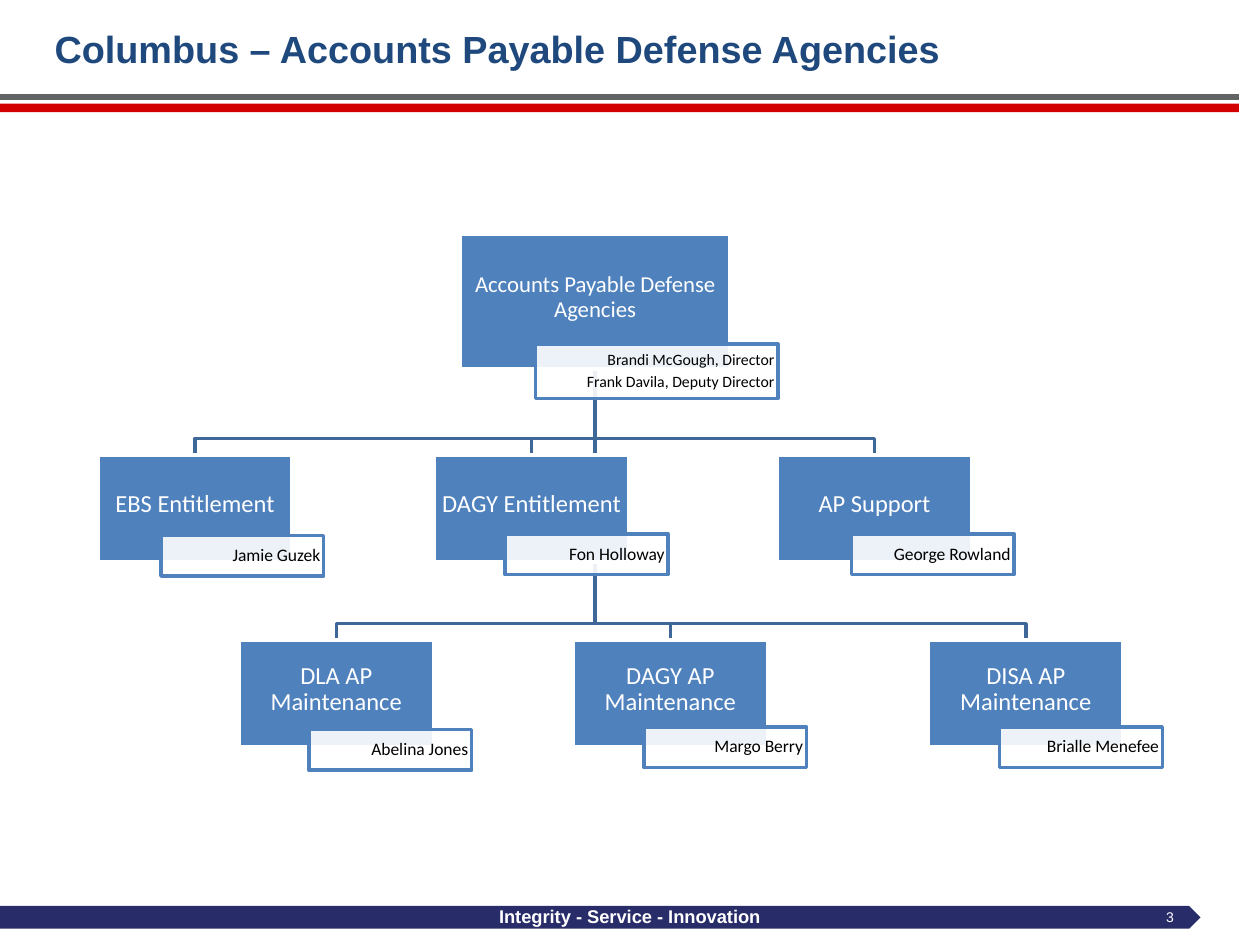
from pptx import Presentation
from pptx.dml.color import RGBColor
from pptx.enum.shapes import MSO_CONNECTOR, MSO_SHAPE
from pptx.enum.text import MSO_ANCHOR, MSO_AUTO_SIZE, PP_ALIGN
from pptx.oxml.ns import qn
from pptx.util import Pt
from lxml.etree import SubElement

TITLE = "Columbus – Accounts Payable Defense Agencies"
MOTTO = "Integrity - Service - Innovation"
NUMBER = "3"
HEAD = ("Accounts Payable Defense Agencies",
        ["Brandi McGough, Director", "Frank Davila, Deputy Director"])
ROWS = [
    (260, [("EBS Entitlement", "Jamie Guzek", 56, 92, 306),
           ("DAGY Entitlement", "Fon Holloway", 248.3, 288.7, 305.2),
           ("AP Support", "George Rowland", 444.3, 486.5, 305.2)]),
    (365.8, [("DLA AP Maintenance", "Abelina Jones", 136.7, 176.5, 417),
             ("DAGY AP Maintenance", "Margo Berry", 327.6, 367.9, 415.4),
             ("DISA AP Maintenance", "Brialle Menefee", 530.7, 571.2, 415.4)]),
]
BOX_W, BOX_H = 111, 61.2
TAG_W, TAG_H = 93, 23.2
STEM, FOOT, DROP = 340, 211, 9.4
BLUE, DARK, WHITE, BLACK = "4F81BD", "3F6797", "FFFFFF", "000000"


def color(code):
    """Turn a hex string into a colour."""
    return RGBColor.from_string(code)


def write(shape, lines, size, tint, align, pad, font="Calibri", bold=False, pitch=None):
    """Put styled lines of text into a shape."""
    frame = shape.text_frame
    frame.word_wrap = True
    frame.auto_size = MSO_AUTO_SIZE.NONE
    frame.vertical_anchor = MSO_ANCHOR.MIDDLE
    (frame.margin_left, frame.margin_top,
     frame.margin_right, frame.margin_bottom) = map(Pt, pad)
    frame.text = "\n".join(lines)
    for i, para in enumerate(frame.paragraphs):
        para.alignment = align
        if pitch:
            para.line_spacing = pitch
        if i:
            para.space_before = Pt(3)
        para.font.name, para.font.size, para.font.bold = font, Pt(size), bold
        para.font.color.rgb = color(tint)


def block(slide, kind, place, fill, line=None):
    """Add a filled shape with an optional outline."""
    shape = slide.shapes.add_shape(kind, *map(Pt, place))
    shape.shadow.inherit = False
    shape.fill.solid()
    shape.fill.fore_color.rgb = color(fill)
    if line:
        shape.line.color.rgb, shape.line.width = color(line), Pt(2)
    else:
        shape.line.fill.background()
    return shape


def branch(slide, top, mid):
    """Draw an elbow from the head box to a unit."""
    bus = top - DROP
    pen = slide.shapes.build_freeform(Pt(STEM), Pt(FOOT))
    pen.add_line_segments([(Pt(STEM), Pt(bus)), (Pt(mid), Pt(bus)),
                           (Pt(mid), Pt(top))], close=False)
    shape = pen.convert_to_shape()
    shape.shadow.inherit = False
    shape.fill.background()
    shape.line.color.rgb, shape.line.width = color(DARK), Pt(2)


def unit(slide, name, people, box, tag, size, small):
    """Add a unit box with the name tag of its leaders."""
    shape = block(slide, MSO_SHAPE.RECTANGLE, box, BLUE, WHITE)
    write(shape, [name], size, WHITE, PP_ALIGN.CENTER, (1, 1, 1, 6), pitch=0.9)
    label = block(slide, MSO_SHAPE.RECTANGLE, tag, WHITE, BLUE)
    tone = label._element.spPr.find(qn("a:solidFill")).find(qn("a:srgbClr"))
    SubElement(tone, qn("a:alpha")).set("val", "90000")
    write(label, people, small, BLACK, PP_ALIGN.RIGHT, (2, 1, 2, 1), pitch=0.9)


def frame_page(slide):
    """Add the title, the rules and the footer."""
    block(slide, MSO_SHAPE.PENTAGON, (0, 517.7, 686, 13), "282C69")
    block(slide, MSO_SHAPE.RECTANGLE, (-0.5, 59.2, 708.5, 5), "D20000")
    rule = slide.shapes.add_connector(MSO_CONNECTOR.STRAIGHT, 0, Pt(55.5), Pt(708), Pt(55.5))
    rule.line.color.rgb, rule.line.width = color("626364"), Pt(3.25)
    SubElement(rule._element.spPr, qn("a:effectLst"))
    for text, place, size, align, bold in [
            (MOTTO, (246, 517.2, 228, 13), 10.5, PP_ALIGN.CENTER, True),
            (NUMBER, (516, 517.5, 162, 12.5), 8, PP_ALIGN.RIGHT, False)]:
        box = slide.shapes.add_textbox(*map(Pt, place))
        write(box, [text], size, WHITE, align, (7.2, 0, 7.2, 0), "Arial", bold)
    title = slide.shapes.title
    title.left, title.top, title.width, title.height = map(Pt, (24, 12.5, 672, 30))
    write(title, [TITLE], 21.6, "1F497D", PP_ALIGN.LEFT, (7.2, 0, 7.2, 0), "Arial", True)


def main():
    """Build the organisation chart slide."""
    deck = Presentation()
    deck.slide_width, deck.slide_height = Pt(720), Pt(540)
    slide = deck.slides.add_slide(deck.slide_layouts[5])
    frame_page(slide)
    for top, units in ROWS:
        for name, lead, left, x, y in units:
            branch(slide, top, left + BOX_W / 2)
    unit(slide, *HEAD, (263, 134, 154, 77), (306, 196.7, 138.5, 31), 13, 9)
    for top, units in ROWS:
        for name, lead, left, x, y in units:
            unit(slide, name, [lead], (left, top, BOX_W, BOX_H),
                 (x, y, TAG_W, TAG_H), 14, 10)
    deck.save("out.pptx")


if __name__ == "__main__":
    main()
